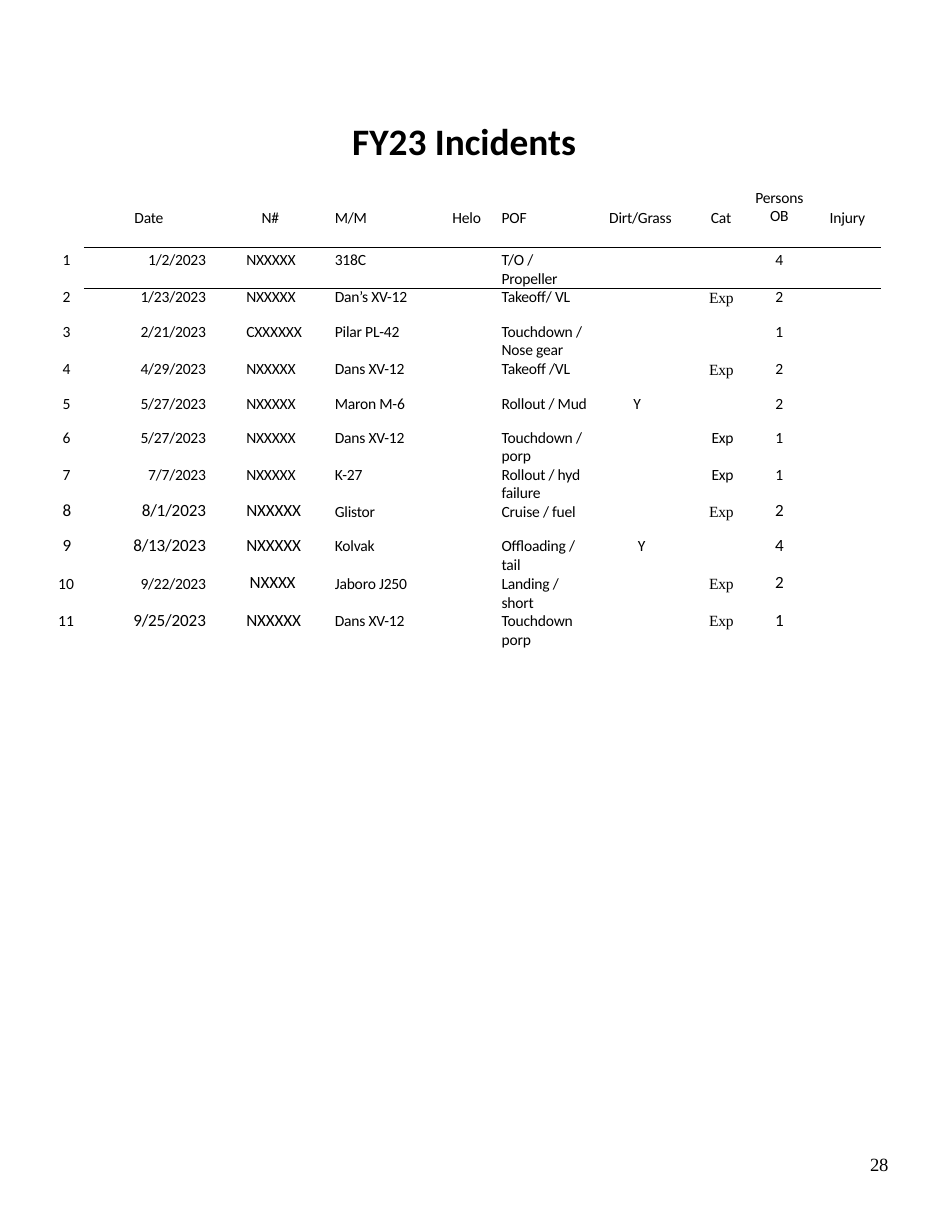
from dataclasses import dataclass
from typing import Optional

from lxml.etree import SubElement
from pptx import Presentation
from pptx.dml.color import RGBColor
from pptx.enum.text import PP_ALIGN
from pptx.oxml.ns import qn
from pptx.util import Inches, Pt

COLORS = {"ink": "000000", "paper": "FFFFFF"}
SANS, SERIF = "Calibri", "Times New Roman"
NO_STYLE = "{2D5ABB26-0587-4C30-8999-92F81FD0307C}"
LEFT, CENTER, RIGHT = PP_ALIGN.LEFT, PP_ALIGN.CENTER, PP_ALIGN.RIGHT
ROWS = [0.54, 0.51, 0.35, 0.32, 0.3, 0.32, 0.3, 0.31, 0.29, 0.31, 0.3,
        0.31, 0.31, 0.3, 0.32, 0.26]


@dataclass
class Column:
    width: float
    field: str = ""
    header: str = ""
    align: PP_ALIGN = LEFT
    left: float = 0
    right: float = 0
    head_align: PP_ALIGN = LEFT
    head_left: float = 0
    head_right: float = 0
    spacing: float = -0.1


@dataclass
class Incident:
    number: str
    date: str
    tail: str
    model: str
    phase: str
    persons: str
    category: str = ""
    surface: str = ""
    leading: Optional[float] = None
    large: tuple[str, ...] = ()
    category_font: str = SERIF


COLUMNS = [
    Column(0.27, "number", left=0.08, spacing=0),
    Column(1.24, "date", "Date", RIGHT, right=0.15, head_align=CENTER, head_right=0.08),
    Column(0.85, "tail", "N#", left=0.21, head_align=CENTER),
    Column(1.01, "model", "M/M", left=0.15, head_left=0.15),
    Column(0.54, "", "Helo", head_left=0.19),
    Column(0.9, "phase", "POF", left=0.09, right=0.03, head_left=0.09),
    Column(0.88, "surface", "Dirt/Grass", CENTER, right=0.08, head_left=0.15),
    Column(0.46, "category", "Cat", RIGHT, right=0.08, head_align=RIGHT,
           head_right=0.1, spacing=-0.2),
    Column(0.66, "persons", "Persons\nOB", CENTER, head_align=CENTER, spacing=0),
    Column(0.58, "", "Injury", head_left=0.12),
]

ALL_LARGE = ("number", "date", "tail", "persons")
INCIDENTS = [
    Incident("1", "1/2/2023", "NXXXXX", "318C", "T/O / Propeller", "4"),
    Incident("2", "1/23/2023", "NXXXXX", "Dan’s XV-12", "Takeoff/ VL", "2", "Exp"),
    Incident("3", "2/21/2023", "CXXXXXX", "Pilar PL-42", "Touchdown / Nose gear", "1",
             leading=11.6),
    Incident("4", "4/29/2023", "NXXXXX", "Dans XV-12", "Takeoff /VL", "2", "Exp"),
    Incident("5", "5/27/2023", "NXXXXX", "Maron M-6", "Rollout / Mud", "2",
             surface="Y", leading=11.6),
    Incident("6", "5/27/2023", "NXXXXX", "Dans XV-12", "Touchdown / porp", "1", "Exp",
             leading=11.7, category_font=SANS),
    Incident("7", "7/7/2023", "NXXXXX", "K-27", "Rollout / hyd failure", "1", "Exp",
             leading=11.7, category_font=SANS),
    Incident("8", "8/1/2023", "NXXXXX", "Glistor", "Cruise / fuel", "2", "Exp",
             large=ALL_LARGE),
    Incident("9", "8/13/2023", "NXXXXX", "Kolvak", "Offloading / tail", "4",
             surface="Y", large=ALL_LARGE),
    Incident("10", "9/22/2023", "NXXXX", "Jaboro J250", "Landing / short", "2", "Exp",
             large=("tail", "persons")),
    Incident("11", "9/25/2023", "NXXXXX", "Dans XV-12", "Touchdown porp", "1", "Exp",
             large=("date", "tail", "persons")),
]


def set_text(tf, text: str, size: float = 10, font: str = SANS, bold: bool = False,
             align: PP_ALIGN = LEFT, leading: Optional[float] = None,
             spacing: float = 0) -> None:
    tf.text = text
    for p in tf.paragraphs:
        p.alignment = align
        if leading:
            p.line_spacing = Pt(leading)
        for r in p.runs:
            r.font.size, r.font.name, r.font.bold = Pt(size), font, bold
            r.font.color.rgb = RGBColor.from_string(COLORS["ink"])
            if spacing:
                r.font._element.set("spc", str(round(spacing * 100)))


def set_margins(cell, left: float = 0, right: float = 0, top: float = 0) -> None:
    cell.margin_left, cell.margin_right = Inches(left), Inches(right)
    cell.margin_top, cell.margin_bottom = Inches(top), 0


def rule_below(cell) -> None:
    tc_pr = cell._tc.get_or_add_tcPr()
    ln = SubElement(tc_pr, qn("a:lnB"), w=str(Pt(0.5)))
    fill = SubElement(ln, qn("a:solidFill"))
    SubElement(fill, qn("a:srgbClr"), val=COLORS["ink"])
    tc_pr.insert(0, ln)


def draw_header(table) -> None:
    for c, col in enumerate(COLUMNS):
        if not col.header:
            continue
        cell = table.cell(1, c)
        two_lines = "\n" in col.header
        set_margins(cell, col.head_left, col.head_right, 0 if two_lines else 0.17)
        set_text(cell.text_frame, col.header, align=col.head_align, leading=11.9,
                 spacing=-0.1)
        if two_lines:
            cell.text_frame.paragraphs[0].line_spacing = Pt(10.8)


def draw_incident(table, row: int, item: Incident) -> None:
    for c, col in enumerate(COLUMNS):
        text = getattr(item, col.field) if col.field else ""
        if not text:
            continue
        cell = table.cell(row, c)
        large = col.field in item.large
        is_category = col.field == "category"
        left = 0.04 if col.field == "number" and len(text) > 1 else col.left
        if text == "NXXXX":
            left = 0.24
        right = 0 if text == "Y" and item.large else col.right
        serif = is_category and item.category_font == SERIF
        set_margins(cell, left, right, 0.03 if row == 2 else 0.01 if serif else 0)
        set_text(cell.text_frame, text, size=11 if large else 10,
                 font=item.category_font if is_category else SANS, align=col.align,
                 leading=12.1 if large else item.leading, spacing=col.spacing)


def draw_table(s) -> None:
    width = sum(col.width for col in COLUMNS)
    table = s.shapes.add_table(len(ROWS), len(COLUMNS), Inches(0.48), Inches(1.16),
                               Inches(width), Inches(sum(ROWS))).table
    table.first_row = table.horz_banding = False
    table._tbl.tblPr.find(qn("a:tableStyleId")).text = NO_STYLE
    for c, col in enumerate(COLUMNS):
        table.columns[c].width = Inches(col.width)
    for r, height in enumerate(ROWS):
        table.rows[r].height = Inches(height)
    for cell in table.iter_cells():
        set_margins(cell)
        cell.fill.background()
        # Small end mark keeps empty cells from stretching their row
        cell.text_frame.paragraphs[0]._p.get_or_add_endParaRPr().set("sz", "1000")

    # Title row
    title = table.cell(0, 0)
    title.merge(table.cell(0, len(COLUMNS) - 1))
    set_margins(title, right=0.06)
    set_text(title.text_frame, "FY23 Incidents", 24, bold=True, align=CENTER, leading=22.8)

    # Header and incidents
    draw_header(table)
    for row, item in enumerate(INCIDENTS, start=2):
        draw_incident(table, row, item)

    # Rules under the header and the first incident
    for row in (1, 2):
        for c in range(1, len(COLUMNS)):
            rule_below(table.cell(row, c))


def draw_page_number(s) -> None:
    tf = s.shapes.add_textbox(Inches(7.73), Inches(10.3), Inches(0.26),
                              Inches(0.21)).text_frame
    tf.word_wrap = True
    tf.margin_left = Inches(0.04)
    tf.margin_right = tf.margin_top = tf.margin_bottom = 0
    set_text(tf, "28", 12, SERIF, leading=14.1, spacing=-0.2)


def main() -> None:
    prs = Presentation()
    prs.slide_width, prs.slide_height = Inches(8.5), Inches(11)
    s = prs.slides.add_slide(prs.slide_layouts[6])
    s.background.fill.solid()
    s.background.fill.fore_color.rgb = RGBColor.from_string(COLORS["paper"])
    draw_page_number(s)
    draw_table(s)
    prs.save("out.pptx")


if __name__ == "__main__":
    main()
